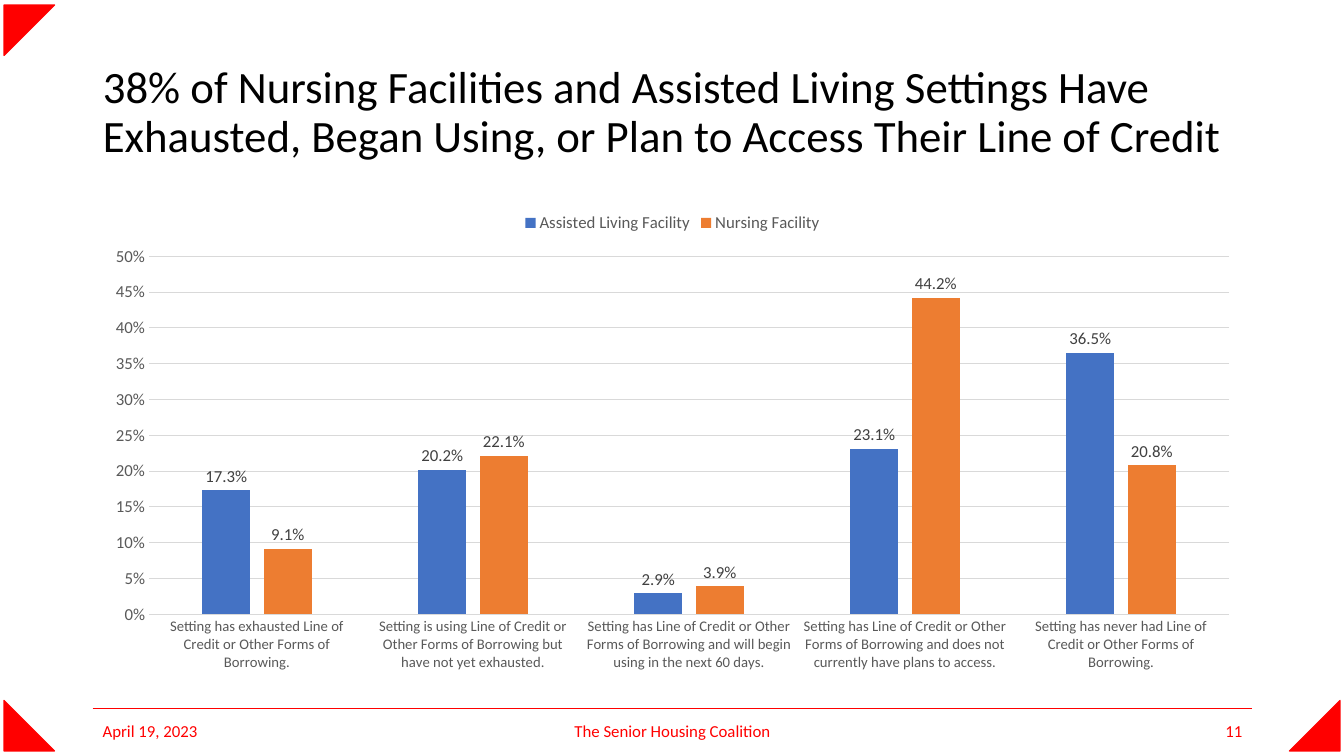
"""Build the slide on line-of-credit use in care settings."""
from lxml.etree import SubElement
from pptx import Presentation
from pptx.chart.data import CategoryChartData
from pptx.dml.color import RGBColor
from pptx.enum.chart import XL_CHART_TYPE, XL_LABEL_POSITION, XL_LEGEND_POSITION, XL_TICK_MARK
from pptx.enum.shapes import MSO_CONNECTOR, MSO_SHAPE
from pptx.enum.text import MSO_ANCHOR, PP_ALIGN
from pptx.oxml.ns import qn
from pptx.util import Inches, Pt

RED, GRAY, GRID = "FF0000", "595959", "D9D9D9"


def color(hex_string):
    return RGBColor.from_string(hex_string)


def write(target, text=None, size=12, fill=RED, align=PP_ALIGN.LEFT, spacing=1.0):
    font = target.font if text is None else None
    if text is not None:
        frame = target.text_frame
        frame.word_wrap = True
        frame.vertical_anchor = MSO_ANCHOR.MIDDLE
        frame.text = text
        paragraph = frame.paragraphs[0]
        paragraph.alignment = align
        paragraph.line_spacing = spacing
        font = paragraph.runs[0].font
    font.name = "Calibri"
    font.size = Pt(size)
    font.bold = False
    font.color.rgb = color(fill)


prs = Presentation()
prs.slide_width, prs.slide_height = Inches(13.33), Inches(7.5)
slide = prs.slides.add_slide(prs.slide_layouts[5])

for left, top, rotation in [(0.04, 0.05, 90), (12.79, 6.95, 270), (0.04, 6.95, 0)]:
    corner = slide.shapes.add_shape(
        MSO_SHAPE.RIGHT_TRIANGLE, Inches(left), Inches(top), Inches(0.5), Inches(0.5))
    corner.rotation = rotation
    corner.shadow.inherit = False
    corner.fill.solid()
    corner.fill.fore_color.rgb = color(RED)
    corner.line.color.rgb = color(RED)
    corner.line.width = Pt(1)

footer_rule = slide.shapes.add_connector(
    MSO_CONNECTOR.STRAIGHT, Inches(0.92), Inches(7.03), Inches(12.42), Inches(7.03))
footer_rule.line.color.rgb = color(RED)
footer_rule.line.width = Pt(0.5)
SubElement(footer_rule._element.spPr, qn("a:effectLst"))

title = slide.shapes.title
title.left, title.top = Inches(0.92), Inches(0.4)
title.width, title.height = Inches(11.5), Inches(1.45)
write(title, "38% of Nursing Facilities and Assisted Living Settings Have Exhausted, "
      "Began Using, or Plan to Access Their Line of Credit",
      size=32, fill="000000", spacing=0.9)

credit_data = CategoryChartData()
credit_data.categories = [
    "Setting has exhausted Line of Credit or Other Forms of Borrowing.",
    "Setting is using Line of Credit or Other Forms of Borrowing but have not yet exhausted.",
    "Setting has Line of Credit or Other Forms of Borrowing and will begin using in the next 60 days.",
    "Setting has Line of Credit or Other Forms of Borrowing and does not currently have plans to access.",
    "Setting has never had Line of Credit or Other Forms of Borrowing.",
]
credit_data.add_series("Assisted Living Facility", [0.173, 0.202, 0.029, 0.231, 0.365], "0.0%")
credit_data.add_series("Nursing Facility", [0.091, 0.221, 0.039, 0.442, 0.208], "0.0%")
chart = slide.shapes.add_chart(
    XL_CHART_TYPE.COLUMN_CLUSTERED, Inches(0.92), Inches(2), Inches(11.5), Inches(4.76),
    credit_data).chart
write(chart, size=10, fill="000000")
chart.has_title = False
chart.has_legend = True
chart.legend.position = XL_LEGEND_POSITION.TOP
chart.legend.include_in_layout = False
write(chart.legend, fill=GRAY)

settings, share = chart.category_axis, chart.value_axis
for axis, size in [(settings, 10.5), (share, 12)]:
    axis.major_tick_mark = axis.minor_tick_mark = XL_TICK_MARK.NONE
    write(axis.tick_labels, size=size, fill=GRAY)
share.minimum_scale, share.maximum_scale, share.major_unit = 0, 0.5, 0.05
share.tick_labels.number_format = "0%"
share.tick_labels.number_format_is_linked = False
share.format.line.fill.background()
for hairline in (settings.format.line, share.major_gridlines.format.line):
    hairline.color.rgb = color(GRID)
    hairline.width = Pt(0.75)

plot = chart.plots[0]
plot.gap_width, plot.overlap = 219, -27
plot.vary_by_categories = False
for facility, fill in zip(plot.series, ["4472C4", "ED7D31"]):
    facility.format.fill.solid()
    facility.format.fill.fore_color.rgb = color(fill)
    facility.invert_if_negative = False
    labels = facility.data_labels
    labels.show_value = True
    labels.number_format = "0.0%"
    labels.number_format_is_linked = False
    labels.position = XL_LABEL_POSITION.OUTSIDE_END
    write(labels, fill="404040")

for text, left, width, align in [
    ("April 19, 2023", 0.92, 3, PP_ALIGN.LEFT),
    ("The Senior Housing Coalition", 4.42, 4.5, PP_ALIGN.CENTER),
    ("11", 9.42, 3, PP_ALIGN.RIGHT),
]:
    footer = slide.shapes.add_textbox(Inches(left), Inches(7.05), Inches(width), Inches(0.4))
    write(footer, text, align=align)

prs.save("out.pptx")
